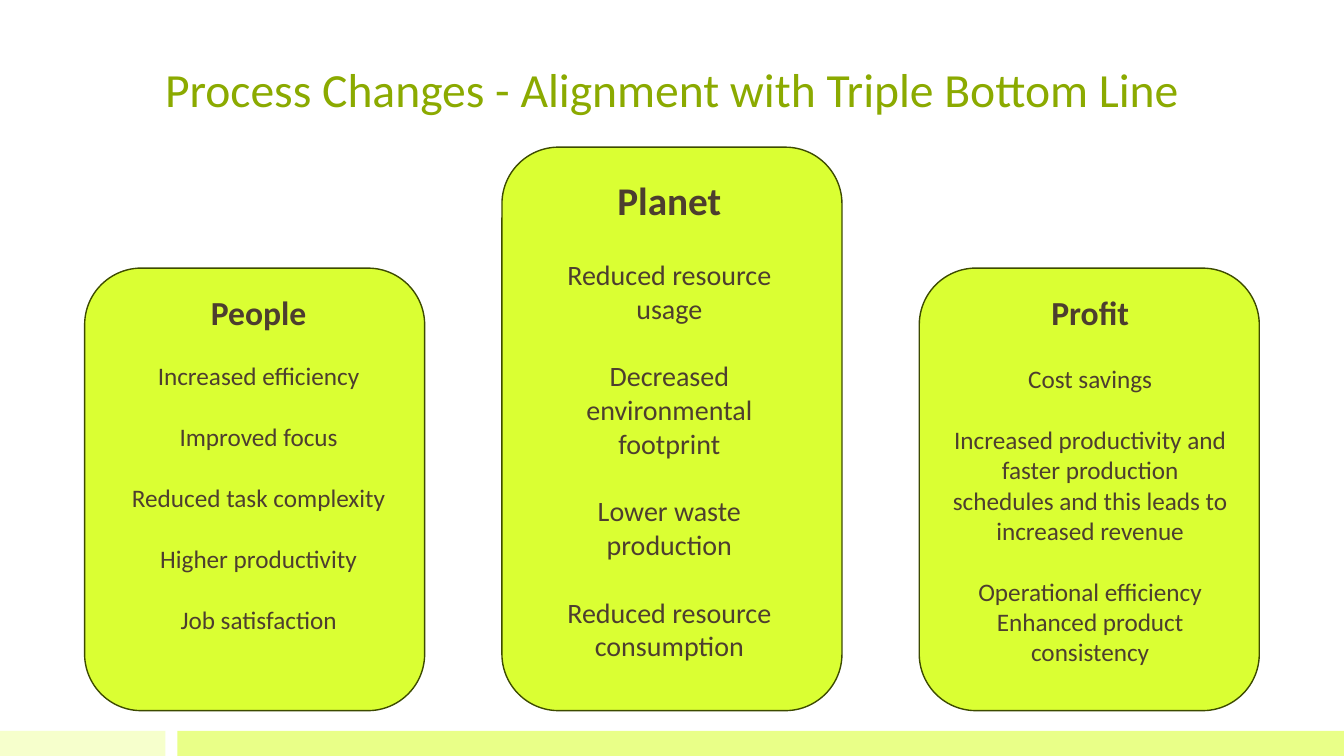
from dataclasses import dataclass

from pptx import Presentation
from pptx.dml.color import RGBColor
from pptx.enum.shapes import MSO_SHAPE
from pptx.enum.text import MSO_ANCHOR, PP_ALIGN
from pptx.util import Inches, Pt

WIDTH, HEIGHT = 13.33, 7.5
ROW = HEIGHT / 30  # the footer is one row high


@dataclass(frozen=True)
class Theme:
    font: str = "Calibri"
    title_color: str = "8BAA00"
    text_color: str = "4D3E2F"
    card_fill: str = "DAFF33"
    card_line: str = "3D4B00"
    footer_light: str = "F6FFCC"
    footer_dark: str = "E9FF88"
    title_size: int = 34
    heading_size: int = 24
    body_size: int = 18
    main_heading_size: int = 28
    main_body_size: int = 20


THEME = Theme()

# Cards span the page between equal margins
MARGIN = 0.063 * WIDTH
CARD_WIDTH = 0.253 * WIDTH
CARD_PITCH = (WIDTH - 2 * MARGIN - CARD_WIDTH) / 2
CARD_BOTTOM = HEIGHT - 1.8 * ROW
SIDE_TOP = 2.66
MAIN_TOP = 1.46

# Each card: top, text area (left offset, top offset, width), sizes,
# heading, gap below it in points, then body lines with the gap after each
SIDE_SIZES = (THEME.heading_size, THEME.body_size)
MAIN_SIZES = (THEME.main_heading_size, THEME.main_body_size)
SIDE_GAP, MAIN_GAP = 22, 24.4
CARDS = [
    (SIDE_TOP, (0.3, 0.19, 2.85), SIDE_SIZES, "People", 19.5, [
        ("Increased efficiency", SIDE_GAP),
        ("Improved focus", SIDE_GAP),
        ("Reduced task complexity", SIDE_GAP),
        ("Higher productivity", SIDE_GAP),
        ("Job satisfaction", 0),
    ]),
    (MAIN_TOP, (0.27, 0.24, 2.78), MAIN_SIZES, "Planet", MAIN_GAP, [
        ("Reduced resource usage", MAIN_GAP),
        ("Decreased environmental", 0),
        ("footprint", MAIN_GAP),
        ("Lower waste production", MAIN_GAP),
        ("Reduced resource consumption", 0),
    ]),
    (SIDE_TOP, (0.23, 0.19, 2.93), SIDE_SIZES, "Profit", SIDE_GAP, [
        ("Cost savings", SIDE_GAP),
        ("Increased productivity and faster production schedules "
         "and this leads to increased revenue", SIDE_GAP),
        ("Operational efficiency", 0),
        ("Enhanced product consistency", 0),
    ]),
]


def add_block(page, kind, left, top, width, height, fill, line=None):
    block = page.shapes.add_shape(
        kind, Inches(left), Inches(top), Inches(width), Inches(height))
    block.shadow.inherit = False
    block.fill.solid()
    block.fill.fore_color.rgb = RGBColor.from_string(fill)
    if line:
        block.line.color.rgb = RGBColor.from_string(line)
        block.line.width = Pt(1)
    else:
        block.line.fill.background()
    return block


def add_text_box(page, left, top, width, height, anchor=MSO_ANCHOR.TOP):
    box = page.shapes.add_textbox(
        Inches(left), Inches(top), Inches(width), Inches(height))
    box.text_frame.word_wrap = True
    box.text_frame.vertical_anchor = anchor
    return box.text_frame


def write(frame, text, size, color=THEME.text_color, bold=False, gap=0):
    """Fill the first empty paragraph, or add one, with formatted text."""
    para = frame.paragraphs[0] if not frame.text else frame.add_paragraph()
    para.alignment = PP_ALIGN.CENTER
    para.space_after = Pt(gap)
    span = para.add_run()
    span.text = text
    span.font.name = THEME.font
    span.font.size = Pt(size)
    span.font.bold = bold
    span.font.color.rgb = RGBColor.from_string(color)


def add_footer(page):
    top = HEIGHT - ROW
    split = 0.132 * WIDTH
    add_block(page, MSO_SHAPE.RECTANGLE, 0, top, 0.123 * WIDTH, ROW,
              THEME.footer_light)
    add_block(page, MSO_SHAPE.RECTANGLE, split, top, WIDTH - split, ROW,
              THEME.footer_dark)


def add_title(page, text):
    frame = add_text_box(page, 0, 0, WIDTH, 1.16, MSO_ANCHOR.BOTTOM)
    frame.margin_bottom = 0
    write(frame, text, THEME.title_size, THEME.title_color)


def add_card(page, column, top, area, sizes, heading, heading_gap, lines):
    left = MARGIN + column * CARD_PITCH
    add_block(page, MSO_SHAPE.ROUNDED_RECTANGLE, left, top, CARD_WIDTH,
              CARD_BOTTOM - top, THEME.card_fill, THEME.card_line)
    text_left, text_top, text_width = area
    frame = add_text_box(page, left + text_left, top + text_top, text_width,
                         CARD_BOTTOM - top - text_top - 0.1)
    heading_size, body_size = sizes
    write(frame, heading, heading_size, bold=True, gap=heading_gap)
    for text, gap in lines:
        write(frame, text, body_size, gap=gap)


def main():
    deck = Presentation()
    deck.slide_width, deck.slide_height = Inches(WIDTH), Inches(HEIGHT)
    page = deck.slides.add_slide(deck.slide_layouts[6])

    # Frame of the page
    add_footer(page)
    add_title(page, "Process Changes - Alignment with Triple Bottom Line")

    # Three cards, the middle one raised
    for column, card in enumerate(CARDS):
        add_card(page, column, *card)

    deck.save("out.pptx")


if __name__ == "__main__":
    main()
